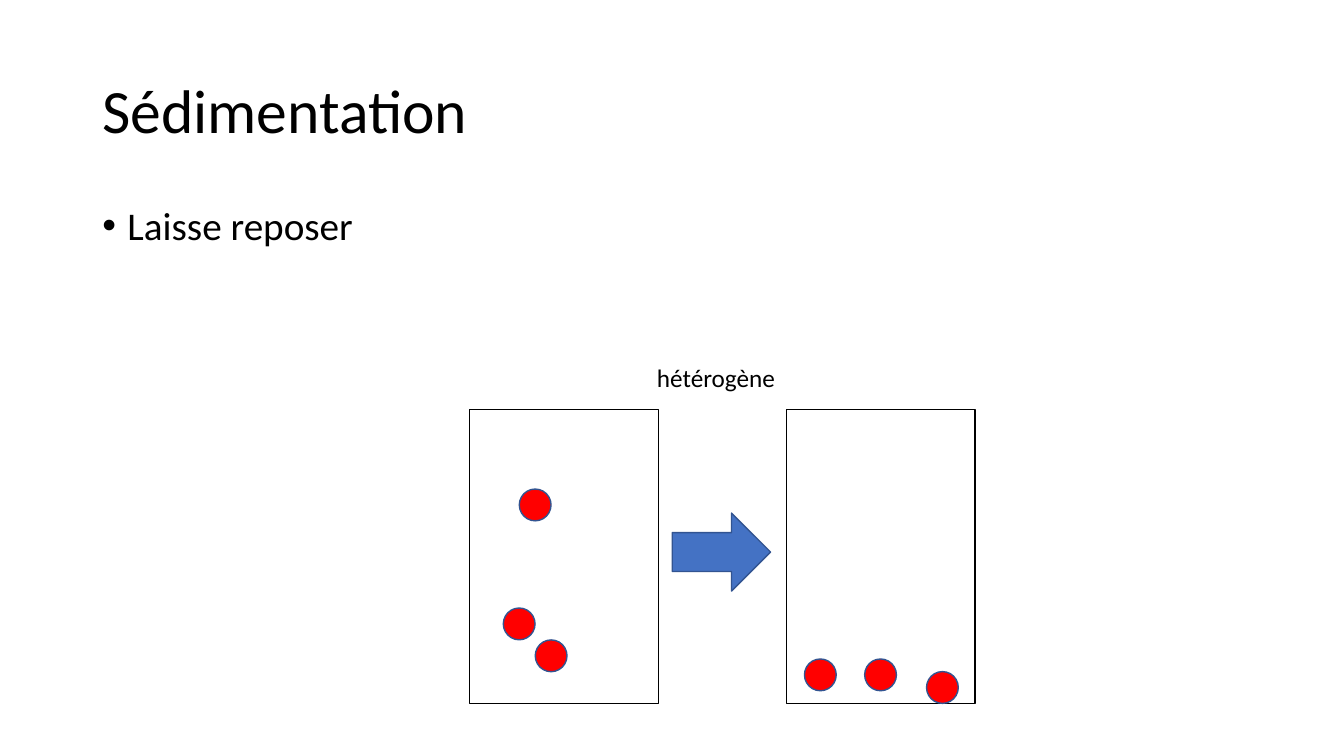
"""Build the slide on sedimentation: particles settling between two beakers."""
from dataclasses import dataclass

from lxml.etree import SubElement
from pptx import Presentation
from pptx.dml.color import RGBColor as Rgb
from pptx.enum.shapes import MSO_SHAPE as Shape
from pptx.enum.text import MSO_ANCHOR as Anchor
from pptx.oxml.ns import qn
from pptx.util import Pt

TITLE = ("Sédimentation", (66, 28.8, 828, 104.4))
METHOD = ("Laisse reposer", (66, 144, 828, 342.6))
MIXTURE = ("hétérogène", (462.2, 254.9, 222.5, 29))

BEAKER_TOP, BEAKER_WIDTH, BEAKER_HEIGHT = 292.3, 134.8, 210.2
BEAKERS = [
    {"left": 335.5, "particles": [(35.4, 57), (24, 142), (46.8, 164.8)]},
    {"left": 561.6, "particles": [(13, 178.4), (56, 178.4), (100.2, 187.4)]},
]
PARTICLE_SIZE = 22.7
ARROW = (480.2, 366.5, 70.2, 55.7)
BULLET_INDENT = 18


@dataclass(frozen=True)
class Theme:
    """Colours, font and type sizes of the slide."""
    font: str = "Calibri"
    ink: Rgb = Rgb(0, 0, 0)
    particle: Rgb = Rgb(0xFF, 0, 0)
    arrow: Rgb = Rgb(0x44, 0x72, 0xC4)
    edge: Rgb = Rgb(0x32, 0x54, 0x91)
    title: int = 44
    body: int = 28
    label: int = 18
    line: int = 1


THEME = Theme()


def points(box):
    """Turn plain numbers into point lengths."""
    return [Pt(length) for length in box]


def add_text(slide, content, size, anchor=Anchor.TOP, spacing=1.0):
    """Add a wrapped line of text and return its paragraph."""
    wording, box = content
    frame = slide.shapes.add_textbox(*points(box)).text_frame
    frame.word_wrap = True
    frame.vertical_anchor = anchor
    frame.text = wording
    paragraph = frame.paragraphs[0]
    paragraph.line_spacing = spacing
    font = paragraph.runs[0].font
    font.name, font.size, font.color.rgb = THEME.font, Pt(size), THEME.ink
    return paragraph


def add_bullet(paragraph):
    """Give a paragraph a hanging round bullet."""
    properties = paragraph._p.get_or_add_pPr()
    properties.set("marL", str(Pt(BULLET_INDENT)))
    properties.set("indent", str(-Pt(BULLET_INDENT)))
    SubElement(properties, qn("a:buFont"), typeface="Arial")
    SubElement(properties, qn("a:buChar"), char="•")


def add_figure(slide, kind, box, line, fill=None):
    """Add an outlined shape, filled when a colour is given."""
    figure = slide.shapes.add_shape(kind, *points(box))
    figure.shadow.inherit = False
    figure.line.color.rgb, figure.line.width = line, Pt(THEME.line)
    if fill is None:
        figure.fill.background()
    else:
        figure.fill.solid()
        figure.fill.fore_color.rgb = fill


def main():
    """Lay out the slide and save it."""
    deck = Presentation()
    deck.slide_width, deck.slide_height = Pt(960), Pt(540)
    slide = deck.slides.add_slide(deck.slide_layouts[6])

    add_text(slide, TITLE, THEME.title, Anchor.MIDDLE, 0.9)
    method = add_text(slide, METHOD, THEME.body, spacing=0.9)
    method.space_before = Pt(10)
    add_bullet(method)

    for beaker in BEAKERS:
        left = beaker["left"]
        outline = (left, BEAKER_TOP, BEAKER_WIDTH, BEAKER_HEIGHT)
        add_figure(slide, Shape.RECTANGLE, outline, THEME.ink)
        for across, down in beaker["particles"]:
            particle = (left + across, BEAKER_TOP + down, PARTICLE_SIZE, PARTICLE_SIZE)
            add_figure(slide, Shape.OVAL, particle, THEME.edge, THEME.particle)

    add_text(slide, MIXTURE, THEME.label)
    add_figure(slide, Shape.RIGHT_ARROW, ARROW, THEME.edge, THEME.arrow)
    deck.save("out.pptx")


if __name__ == "__main__":
    main()
